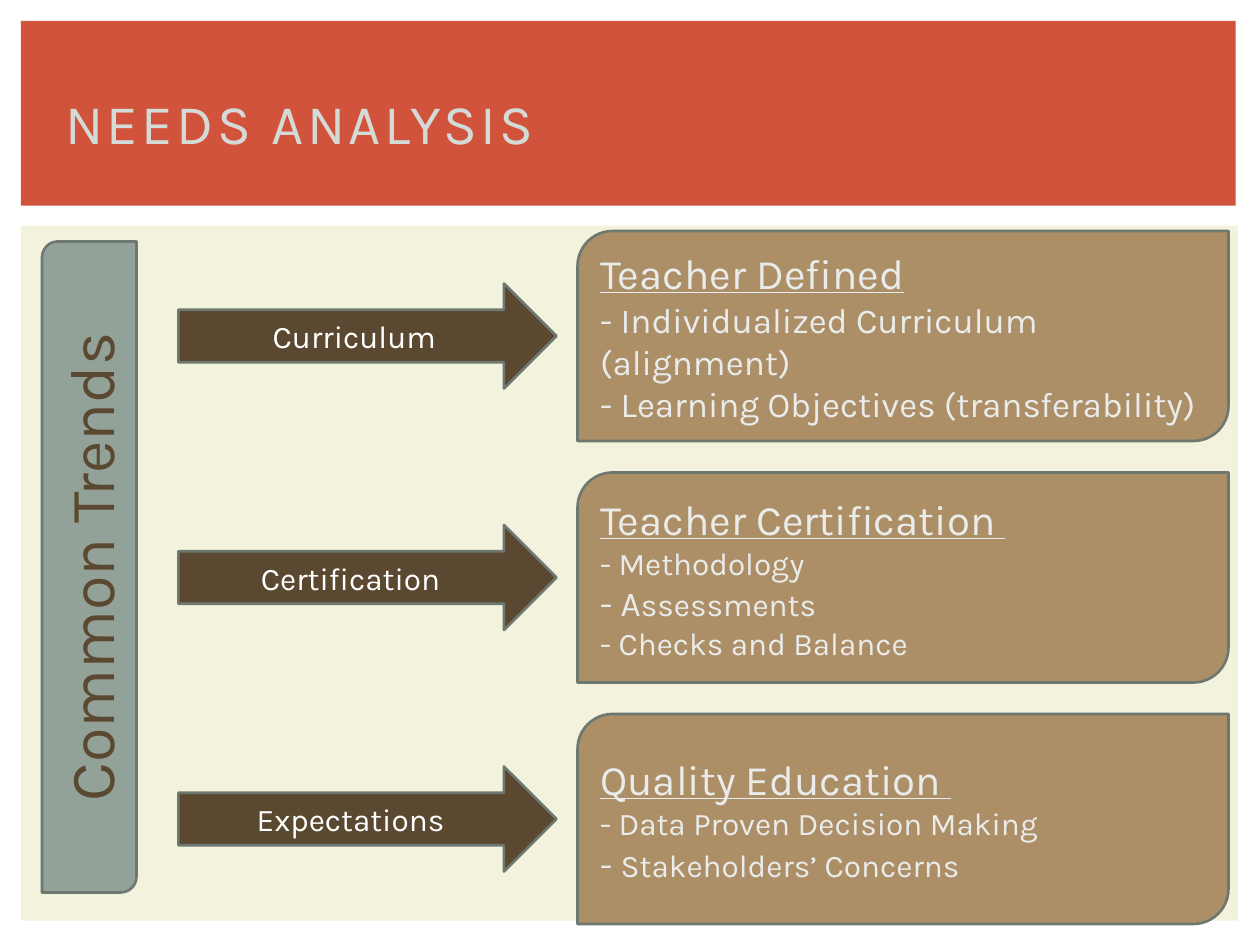
from pptx import Presentation
from pptx.dml.color import RGBColor
from pptx.enum.shapes import MSO_SHAPE as Shape
from pptx.enum.text import MSO_ANCHOR as Anchor, PP_ALIGN as Align
from pptx.util import Emu, Pt

PX = 7620
FONT = "Karla"
RED = RGBColor(0xD2, 0x53, 0x3C)
CREAM = RGBColor(0xF3, 0xF2, 0xDC)
SAGE = RGBColor(0x93, 0xA2, 0x99)
SAGE_DARK = RGBColor(0x6D, 0x78, 0x71)
BROWN = RGBColor(0x5A, 0x48, 0x30)
TAN = RGBColor(0xAD, 0x8F, 0x67)
PALE = RGBColor(0xE9, 0xEC, 0xEB)
TITLE_GREY = RGBColor(0xD4, 0xDA, 0xD6)
WHITE = RGBColor(0xFF, 0xFF, 0xFF)

ROW_TOP, ROW_STEP = 220, 230
TRENDS = [
    ("Curriculum", "Teacher Defined", [
        [("- Individualized Curriculum (alignment)", 20)],
        [("- Learning Objectives (transferability)", 20)],
    ]),
    ("Certification ", "Teacher Certification ", [
        [("- Methodology", 18)],
        [("- A", 20), ("ssessments", 18)],
        [("- Checks and Balance", 18)],
    ]),
    ("Expectations ", "Quality Education ", [
        [("- Data Proven Decision Making", 18)],
        [("- ", 20), ("Stakeholders’ Concerns", 18)],
    ]),
]


def px(*lengths):
    return [Emu(length * PX) for length in lengths]


def add_run(paragraph, text, size, color, underline=None):
    run = paragraph.add_run()
    run.text = text
    run.font.name = FONT
    run.font.size = Pt(size)
    run.font.color.rgb = color
    run.font.underline = underline
    return run


def add_block(slide, kind, box, fill, outline=None):
    block = slide.shapes.add_shape(kind, *px(*box))
    block.shadow.inherit = False
    block.fill.solid()
    block.fill.fore_color.rgb = fill
    if outline is None:
        block.line.fill.background()
    else:
        block.line.color.rgb = outline
        block.line.width = Pt(1.5)
    block.text_frame.word_wrap = True
    block.text_frame.vertical_anchor = Anchor.MIDDLE
    return block


def add_label(slide, kind, box, fill, text, size, color):
    frame = add_block(slide, kind, box, fill, SAGE_DARK).text_frame
    caption = frame.paragraphs[0]
    caption.alignment = Align.CENTER
    add_run(caption, text, size, color)
    return frame


def add_card(slide, box, heading, points):
    card = add_block(slide, Shape.ROUND_2_DIAG_RECTANGLE, box, TAN, SAGE_DARK)
    frame = card.text_frame
    frame.paragraphs[0].alignment = Align.LEFT
    add_run(frame.paragraphs[0], heading, 24, PALE, underline=True)
    for point in points:
        line = frame.add_paragraph()
        line.alignment = Align.LEFT
        for text, size in point:
            add_run(line, text, size, PALE)


def set_title(slide, text):
    title = slide.shapes.title
    title.left, title.top, title.width, title.height = px(50, 47, 1100, 138)
    title.text_frame.word_wrap = True
    title.text_frame.vertical_anchor = Anchor.MIDDLE
    heading = title.text_frame.paragraphs[0]
    heading.alignment = Align.LEFT
    run = add_run(heading, text, 32, TITLE_GREY)
    run.font._element.set("spc", "200")
    slide.shapes._spTree.append(title._element)


def main():
    deck = Presentation()
    deck.slide_width, deck.slide_height = px(1200, 900)
    slide = deck.slides.add_slide(deck.slide_layouts[5])

    add_block(slide, Shape.RECTANGLE, (20, 215, 1159, 662), CREAM)
    add_block(slide, Shape.RECTANGLE, (20, 20, 1157, 176), RED)
    set_title(slide, "NEEDS ANALYSIS")

    trends = add_label(slide, Shape.ROUND_2_DIAG_RECTANGLE,
                       (40, 230, 90, 620), SAGE, "Common Trends", 36, BROWN)
    trends._txBody.bodyPr.set("vert", "vert270")

    for row, (topic, heading, points) in enumerate(TRENDS):
        top = ROW_TOP + row * ROW_STEP
        add_label(slide, Shape.RIGHT_ARROW, (170, top + 50, 360, 100),
                  BROWN, topic, 18, WHITE)
        add_card(slide, (550, top, 620, 200), heading, points)

    deck.save("out.pptx")


if __name__ == "__main__":
    main()
